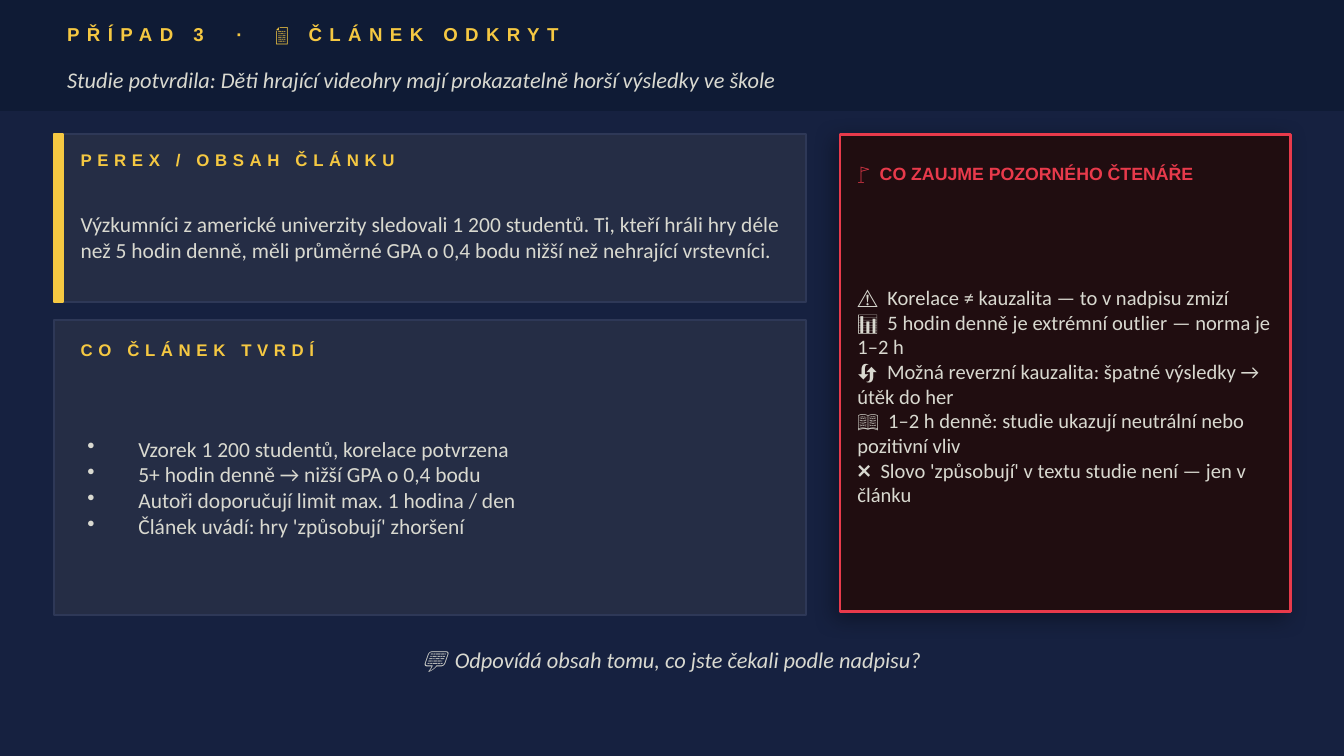
"""Build the slide that reveals the article of case 3."""
from dataclasses import dataclass

from lxml.etree import SubElement
from pptx import Presentation
from pptx.dml.color import RGBColor
from pptx.enum.shapes import MSO_SHAPE as Preset
from pptx.enum.text import MSO_ANCHOR as Anchor, PP_ALIGN as Align
from pptx.oxml.ns import qn
from pptx.shapes.autoshape import Shape
from pptx.slide import Slide
from pptx.util import Inches, Pt


@dataclass(frozen=True)
class Theme:
    background: str = "162140"
    header: str = "0F1B35"
    panel: str = "252D45"
    border: str = "2E3857"
    yellow: str = "F5C842"
    red: str = "E83A4B"
    warning: str = "200D10"
    shadow: str = "000000"
    body: str = "D9D9D0"
    heading_font: str = "Arial"
    body_font: str = "Calibri"
    kicker_size: float = 10
    label_size: float = 9
    warning_size: float = 9.5
    lead_size: float = 12
    text_size: float = 11.5
    clue_size: float = 11


THEME = Theme()


@dataclass(frozen=True)
class Box:
    left: float
    top: float
    width: float
    height: float

    def lengths(self) -> tuple:
        return tuple(map(Inches, (self.left, self.top, self.width, self.height)))


@dataclass(frozen=True)
class Panel:
    box: Box
    fill: str
    border: str
    border_width: float = 1
    shadow: bool = False


@dataclass(frozen=True)
class Style:
    size: float
    color: str = THEME.body
    font: str = THEME.body_font
    bold: bool = False
    italic: bool = False
    spacing: int = 0
    align: Align = Align.LEFT
    bullet: bool = False


@dataclass(frozen=True)
class Caption:
    box: Box
    style: Style
    paragraphs: tuple[str, ...]


KICKER = Style(THEME.kicker_size, THEME.yellow, THEME.heading_font, bold=True, spacing=4)
LABEL = Style(THEME.label_size, THEME.yellow, THEME.heading_font, bold=True, spacing=3)
WARNING = Style(THEME.warning_size, THEME.red, THEME.heading_font, bold=True)
HEADLINE = Style(THEME.lead_size, italic=True)
QUESTION = Style(THEME.lead_size, italic=True, align=Align.CENTER)
BODY = Style(THEME.text_size)
CLAIM = Style(THEME.text_size, bullet=True)
CLUE = Style(THEME.clue_size)

PANELS = (
    Panel(Box(0, 0, 10, 0.82), THEME.header, THEME.header),
    Panel(Box(0.4, 1, 5.6, 1.25), THEME.panel, THEME.border),
    Panel(Box(0.4, 1, 0.07, 1.25), THEME.yellow, THEME.yellow),
    Panel(Box(0.4, 2.38, 5.6, 2.2), THEME.panel, THEME.border),
    Panel(Box(6.25, 1, 3.35, 3.55), THEME.warning, THEME.red, 1.5, shadow=True),
)

CLUES = (
    "⚠️  Korelace ≠ kauzalita — to v nadpisu zmizí",
    "📊  5 hodin denně je extrémní outlier — norma je 1–2 h",
    "🔄  Možná reverzní kauzalita: špatné výsledky → útěk do her",
    "📖  1–2 h denně: studie ukazují neutrální nebo pozitivní vliv",
    "❌  Slovo 'způsobují' v textu studie není — jen v článku",
)

CAPTIONS = (
    Caption(Box(0.5, 0.08, 9, 0.35), KICKER, ("PŘÍPAD 3  ·  📄 ČLÁNEK ODKRYT",)),
    Caption(Box(0.5, 0.42, 9, 0.35), HEADLINE, (
        "Studie potvrdila: Děti hrající videohry mají prokazatelně horší výsledky ve škole",)),
    Caption(Box(0.6, 1.05, 5.2, 0.28), LABEL, ("PEREX / OBSAH ČLÁNKU",)),
    Caption(Box(0.6, 1.35, 5.2, 0.82), BODY, (
        "Výzkumníci z americké univerzity sledovali 1 200 studentů. Ti, kteří hráli hry déle "
        "než 5 hodin denně, měli průměrné GPA o 0,4 bodu nižší než nehrající vrstevníci.",)),
    Caption(Box(0.6, 2.45, 5.2, 0.3), LABEL, ("CO ČLÁNEK TVRDÍ",)),
    Caption(Box(0.65, 2.8, 5.1, 1.65), CLAIM, (
        "Vzorek 1 200 studentů, korelace potvrzena",
        "5+ hodin denně → nižší GPA o 0,4 bodu",
        "Autoři doporučují limit max. 1 hodina / den",
        "Článek uvádí: hry 'způsobují' zhoršení",
    )),
    Caption(Box(6.38, 1.08, 3.1, 0.42), WARNING, ("🚩  CO ZAUJME POZORNÉHO ČTENÁŘE",)),
    Caption(Box(6.38, 1.52, 3.1, 2.85), CLUE, ("\n".join(CLUES),)),
    Caption(Box(0.5, 4.73, 9, 0.35), QUESTION, (
        "💬  Odpovídá obsah tomu, co jste čekali podle nadpisu?",)),
)


def rgb(value: str) -> RGBColor:
    return RGBColor.from_string(value)


def cast_shadow(shape: Shape) -> None:
    effects = shape.element.spPr.find(qn("a:effectLst"))
    outer = SubElement(effects, qn("a:outerShdw"), blurRad=str(Pt(12)), dist=str(Pt(4)),
                       dir=str(135 * 60000), algn="bl", rotWithShape="0")
    color = SubElement(outer, qn("a:srgbClr"), val=THEME.shadow)
    SubElement(color, qn("a:alpha"), val="35000")


def draw_panel(slide: Slide, panel: Panel) -> None:
    shape = slide.shapes.add_shape(Preset.RECTANGLE, *panel.box.lengths())
    shape.fill.solid()
    shape.fill.fore_color.rgb = rgb(panel.fill)
    shape.line.color.rgb = rgb(panel.border)
    shape.line.width = Pt(panel.border_width)
    shape.shadow.inherit = False
    if panel.shadow:
        cast_shadow(shape)


def draw_caption(slide: Slide, caption: Caption) -> None:
    style = caption.style
    frame = slide.shapes.add_textbox(*caption.box.lengths()).text_frame
    frame.word_wrap = True
    frame.vertical_anchor = Anchor.MIDDLE
    frame.margin_left = frame.margin_top = frame.margin_right = frame.margin_bottom = 0
    for index, wording in enumerate(caption.paragraphs):
        paragraph = frame.add_paragraph() if index else frame.paragraphs[0]
        paragraph.text = wording
        paragraph.alignment = style.align
        if style.bullet:
            properties = paragraph._p.get_or_add_pPr()
            properties.set("marL", str(Inches(0.38)))
            properties.set("indent", str(-Inches(0.38)))
            SubElement(properties, qn("a:buSzPct"), val="100000")
            SubElement(properties, qn("a:buChar"), char="•")
        for run in paragraph.runs:
            run.font.name = style.font
            run.font.size = Pt(style.size)
            run.font.bold = style.bold
            run.font.italic = style.italic
            run.font.color.rgb = rgb(style.color)
            if style.spacing:
                run._r.get_or_add_rPr().set("spc", str(style.spacing * 100))


def main() -> None:
    presentation = Presentation()
    presentation.slide_width = Inches(10)
    presentation.slide_height = presentation.slide_width * 9 // 16
    slide = presentation.slides.add_slide(presentation.slide_layouts[6])
    slide.background.fill.solid()
    slide.background.fill.fore_color.rgb = rgb(THEME.background)
    for panel in PANELS:
        draw_panel(slide, panel)
    for caption in CAPTIONS:
        draw_caption(slide, caption)
    presentation.save("out.pptx")


if __name__ == "__main__":
    main()
